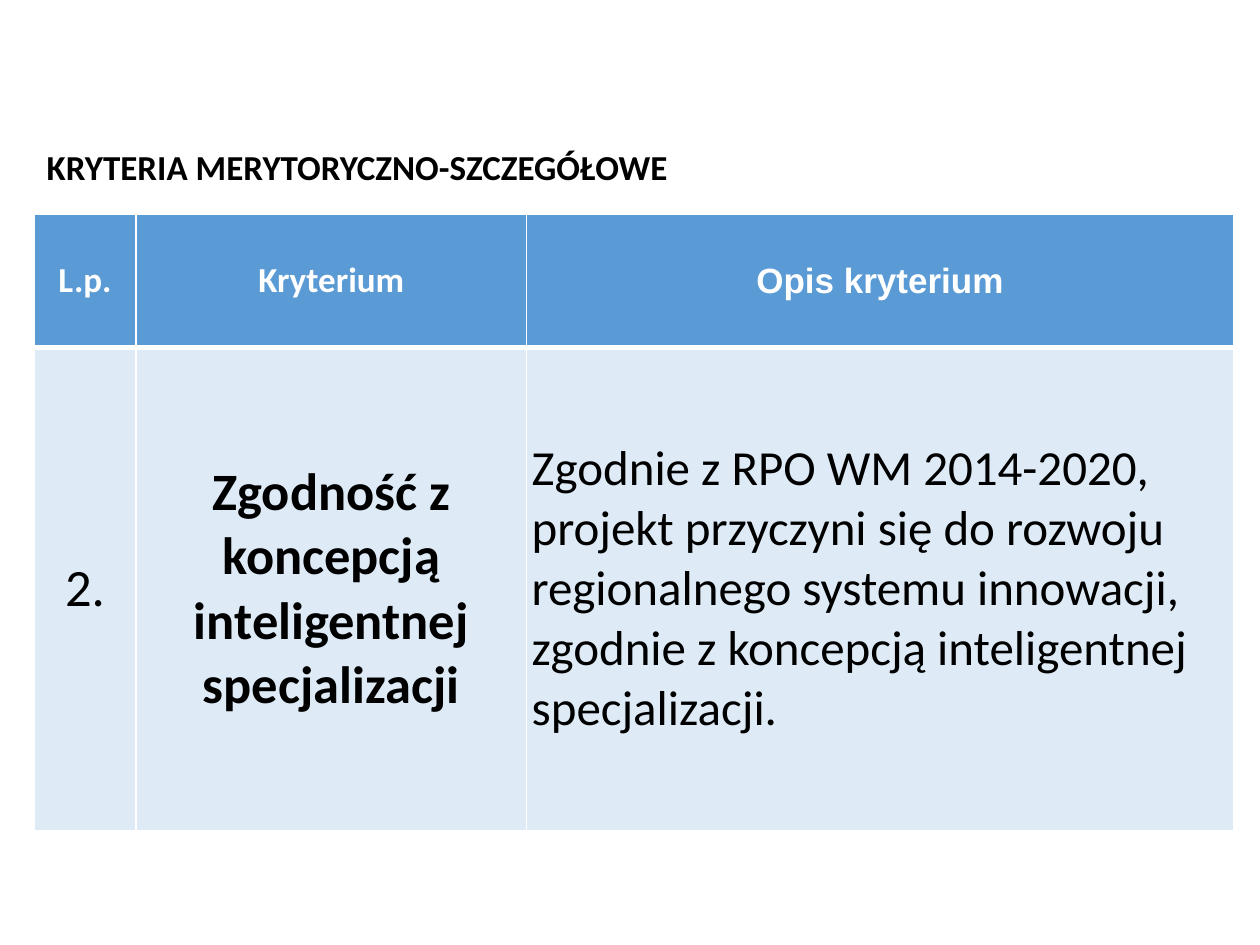
from dataclasses import dataclass

from lxml import etree
from pptx import Presentation
from pptx.dml.color import RGBColor
from pptx.enum.text import MSO_ANCHOR, MSO_AUTO_SIZE, PP_ALIGN
from pptx.oxml.ns import qn
from pptx.util import Inches, Pt

MIDDLE = MSO_ANCHOR.MIDDLE
LEFT, CENTER = PP_ALIGN.LEFT, PP_ALIGN.CENTER


@dataclass(frozen=True)
class Theme:
    white: str = "FFFFFF"
    black: str = "000000"
    head: str = "5B9BD5"
    body: str = "DEEBF7"
    font: str = "Calibri"
    alt: str = "Arial"
    small: int = 20
    mid: int = 28
    large: int = 30
    thin: int = 1
    thick: int = 3


T = Theme()
TITLE = "KRYTERIA MERYTORYCZNO-SZCZEGÓŁOWE"
# text, font, size, bold, alignment
ROWS = [
    [("L.p.", T.font, T.small, True, CENTER),
     ("Kryterium", T.font, T.small, True, CENTER),
     ("Opis kryterium", T.alt, T.small, True, CENTER)],
    [("2.", T.font, T.large, False, CENTER),
     ("Zgodność z koncepcją inteligentnej specjalizacji",
      T.font, T.large, True, CENTER),
     ("Zgodnie z RPO WM 2014-2020, projekt przyczyni się do rozwoju "
      "regionalnego systemu innowacji, zgodnie z koncepcją inteligentnej "
      "specjalizacji.", T.font, T.mid, False, LEFT)],
]
EDGE, TOP = 0.27, 1.7
COLS = [0.81, 3.1, 5.61]
HEIGHTS = [1.06, 3.83]
PAD = 0.04


def write(frame, text, font, size, bold, align, color):
    para = frame.paragraphs[0]
    para.alignment = align
    run = para.add_run()
    run.text = text
    run.font.name = font
    run.font.size = Pt(size)
    run.font.bold = bold
    run.font.color.rgb = RGBColor.from_string(color)


def border(cell, widths):
    """Draw white edges; widths are in points, keyed by side in schema order."""
    props = cell._tc.get_or_add_tcPr()
    for spot, (side, width) in enumerate(widths.items()):
        line = etree.Element(qn(f"a:ln{side}"), w=str(Pt(width)))
        fill = etree.SubElement(line, qn("a:solidFill"))
        etree.SubElement(fill, qn("a:srgbClr"), val=T.white)
        props.insert(spot, line)


def add_title(slide):
    title = slide.shapes.title
    title.left, title.top = Inches(EDGE), Inches(1.1)
    title.width, title.height = Inches(5.17), Inches(0.44)
    frame = title.text_frame
    frame.word_wrap = False
    frame.auto_size = MSO_AUTO_SIZE.SHAPE_TO_FIT_TEXT
    frame.vertical_anchor = MIDDLE
    write(frame, TITLE, T.font, T.small, True, LEFT, T.black)


def add_grid(slide):
    table = slide.shapes.add_table(
        len(ROWS), len(COLS), Inches(EDGE), Inches(TOP),
        Inches(sum(COLS)), Inches(sum(HEIGHTS))).table
    for col, width in zip(table.columns, COLS):
        col.width = Inches(width)
    for r, (row, high) in enumerate(zip(ROWS, HEIGHTS)):
        table.rows[r].height = Inches(high)
        top, low = (T.thin, T.thick) if r == 0 else (T.thick, T.thin)
        ground, ink = (T.head, T.white) if r == 0 else (T.body, T.black)
        for c, (text, font, size, bold, align) in enumerate(row):
            cell = table.cell(r, c)
            cell.vertical_anchor = MIDDLE
            cell.fill.solid()
            cell.fill.fore_color.rgb = RGBColor.from_string(ground)
            if align == LEFT:
                cell.margin_left = cell.margin_right = Inches(PAD)
                cell.margin_top = cell.margin_bottom = Inches(PAD)
            border(cell, {"L": T.thin, "R": T.thin, "T": top, "B": low})
            write(cell.text_frame, text, font, size, bold, align, ink)


def main():
    deck = Presentation()
    deck.slide_width, deck.slide_height = Inches(10), Inches(7.5)
    slide = deck.slides.add_slide(deck.slide_layouts.get_by_name("Title Only"))
    add_title(slide)
    add_grid(slide)
    deck.save("out.pptx")


if __name__ == "__main__":
    main()
